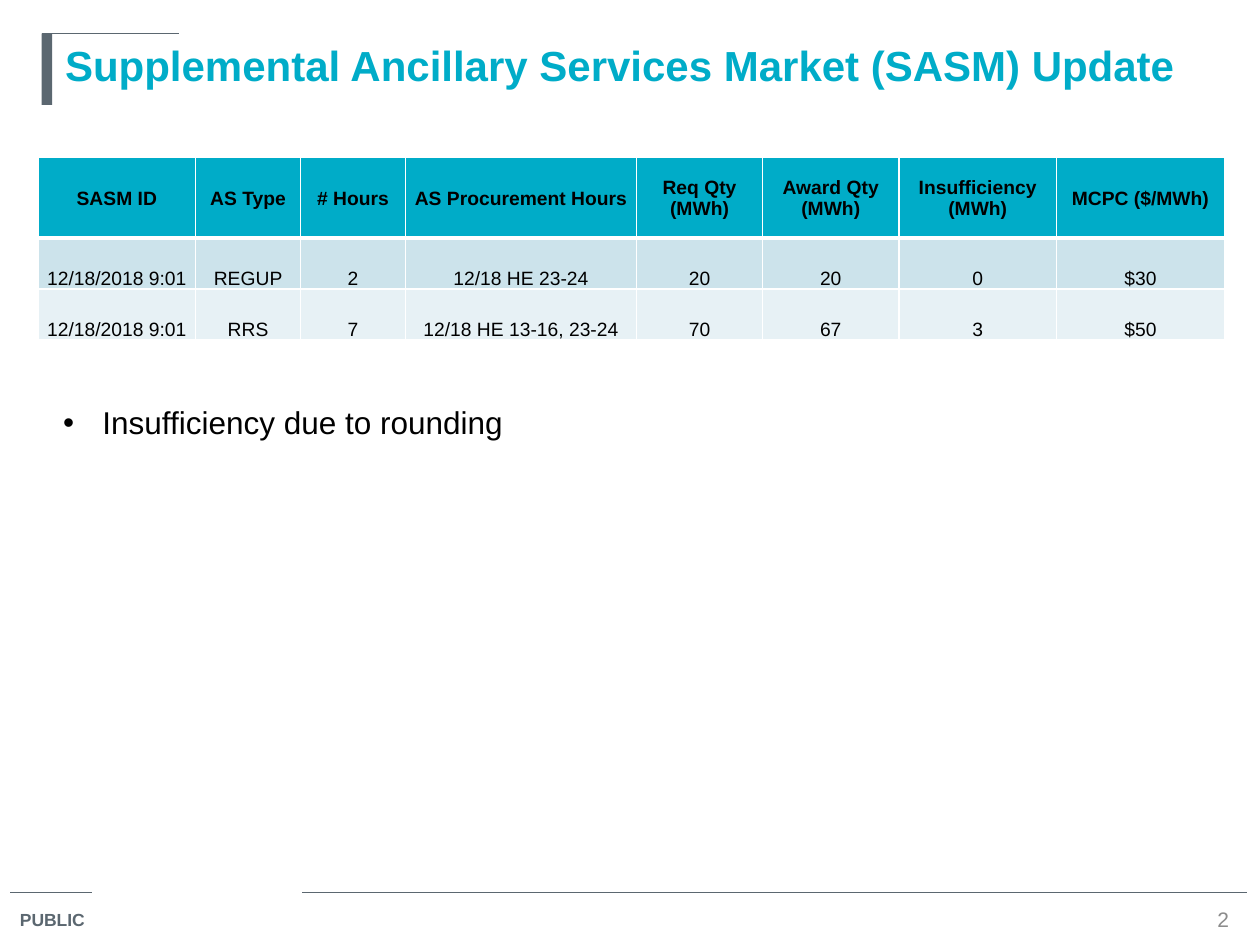
"""Build the Supplemental Ancillary Services Market update slide."""
from dataclasses import dataclass

from lxml import etree
from pptx import Presentation
from pptx.dml.color import RGBColor as RGB
from pptx.enum.shapes import MSO_CONNECTOR as Connector, MSO_SHAPE as Shape
from pptx.enum.text import MSO_ANCHOR as Anchor, MSO_AUTO_SIZE as AutoSize, PP_ALIGN as Align
from pptx.oxml.ns import qn
from pptx.util import Pt


@dataclass(frozen=True)
class Theme:
    font: str = "Arial"
    accent: str = "00ACC8"
    slate: str = "5B6770"
    grey: str = "8C8C8C"
    ink: str = "000000"
    border: str = "FFFFFF"
    bands: tuple = ("CCE3EB", "E7F1F5")
    title_size: int = 24
    body_size: int = 18
    number_size: int = 12
    table_size: int = 11
    footer_size: int = 10


theme = Theme()


def set_text(frame, text, size, color, bold=False, align=Align.LEFT, anchor=Anchor.TOP):
    frame.text = text
    frame.vertical_anchor = anchor
    for paragraph in frame.paragraphs:
        paragraph.alignment = align
        for run in paragraph.runs:
            run.font.name = theme.font
            run.font.size = Pt(size)
            run.font.bold = bold
            run.font.color.rgb = RGB.from_string(color)


def add_border(cell, side, width):
    edge = etree.SubElement(cell._tc.get_or_add_tcPr(), qn(f"a:ln{side}"), w=str(Pt(width)))
    fill = etree.SubElement(edge, qn("a:solidFill"))
    etree.SubElement(fill, qn("a:srgbClr"), val=theme.border)


prs = Presentation()
prs.slide_width, prs.slide_height = Pt(720), Pt(540)
slide = prs.slides.add_slide(prs.slide_layouts[1])
shapes = slide.shapes

rules = [(5.8, 52.6, 510), (172.8, 712.8, 510), (23.8, 102.2, 19.2)]
for start, end, y in rules:
    rule = shapes.add_connector(Connector.STRAIGHT, Pt(start), Pt(y), Pt(end), Pt(y))
    rule.line.color.rgb = RGB.from_string(theme.slate)
    rule.line.width = Pt(0.75)
    etree.SubElement(rule._element.spPr, qn("a:effectLst"))

title_bar = shapes.add_shape(Shape.RECTANGLE, Pt(23.8), Pt(19.2), Pt(6), Pt(40.8))
title_bar.shadow.inherit = False
title_bar.fill.solid()
title_bar.fill.fore_color.rgb = RGB.from_string(theme.slate)
title_bar.line.fill.background()

title = shapes.title
title.left, title.top, title.width, title.height = Pt(30), Pt(19.2), Pt(666), Pt(90)
set_text(title.text_frame, "Supplemental Ancillary Services Market (SASM) Update",
         theme.title_size, theme.accent, bold=True)

classification = shapes.add_textbox(Pt(4.3), Pt(516.2), Pt(55.4), Pt(20)).text_frame
classification.word_wrap = False
set_text(classification, "PUBLIC", theme.footer_size, theme.slate, bold=True)

page_number = shapes.add_textbox(Pt(690), Pt(517), Pt(18), Pt(16.5)).text_frame
page_number.margin_left = page_number.margin_right = 0
page_number.margin_top = page_number.margin_bottom = 0
set_text(page_number, "2", theme.number_size, theme.grey, align=Align.CENTER, anchor=Anchor.MIDDLE)

awards = [
    ("SASM ID", "AS Type", "# Hours", "AS Procurement Hours", "Req Qty\v(MWh)",
     "Award Qty\v(MWh)", "Insufficiency\v(MWh)", "MCPC ($/MWh)"),
    ("12/18/2018 9:01", "REGUP", "2", "12/18 HE 23-24", "20", "20", "0", "$30"),
    ("12/18/2018 9:01", "RRS", "7", "12/18 HE 13-16, 23-24", "70", "67", "3", "$50"),
]
column_widths = [90, 60, 60, 132, 72, 78, 90, 96]
row_heights = [46, 29.2, 29.2]
market = shapes.add_table(len(awards), len(column_widths), Pt(21.8), Pt(90),
                          Pt(sum(column_widths)), Pt(sum(row_heights))).table
for column, width in zip(market.columns, column_widths):
    column.width = Pt(width)
for index, (row, height, values) in enumerate(zip(market.rows, row_heights, awards)):
    row.height = Pt(height)
    header = index == 0
    for cell, value in zip(row.cells, values):
        cell.margin_left = cell.margin_right = cell.margin_top = Pt(0.7)
        cell.margin_bottom = 0
        cell.vertical_anchor = Anchor.MIDDLE if header else Anchor.BOTTOM
        set_text(cell.text_frame, value, theme.table_size, theme.ink, bold=header,
                 align=Align.CENTER, anchor=None)
        for side, width in zip("LRTB", (1, 1, 3 if index == 1 else 1, 3 if header else 1)):
            add_border(cell, side, width)
        cell.fill.solid()
        cell.fill.fore_color.rgb = RGB.from_string(theme.accent if header else theme.bands[index - 1])

remarks = slide.placeholders[1]
remarks.left, remarks.top, remarks.width, remarks.height = Pt(28.8), Pt(226.8), Pt(267.8), Pt(29)
remarks.text_frame.word_wrap = False
remarks.text_frame.auto_size = AutoSize.SHAPE_TO_FIT_TEXT
set_text(remarks.text_frame, "Insufficiency due to rounding", theme.body_size, theme.ink)
remark = remarks.text_frame.paragraphs[0]
remark.space_before = Pt(0)
bullet = remark._p.get_or_add_pPr()
bullet.set("marL", str(Pt(22.5)))
bullet.set("indent", str(Pt(-22.5)))
etree.SubElement(bullet, qn("a:buFont"), typeface=theme.font)
etree.SubElement(bullet, qn("a:buChar"), char="•")

prs.save("out.pptx")
